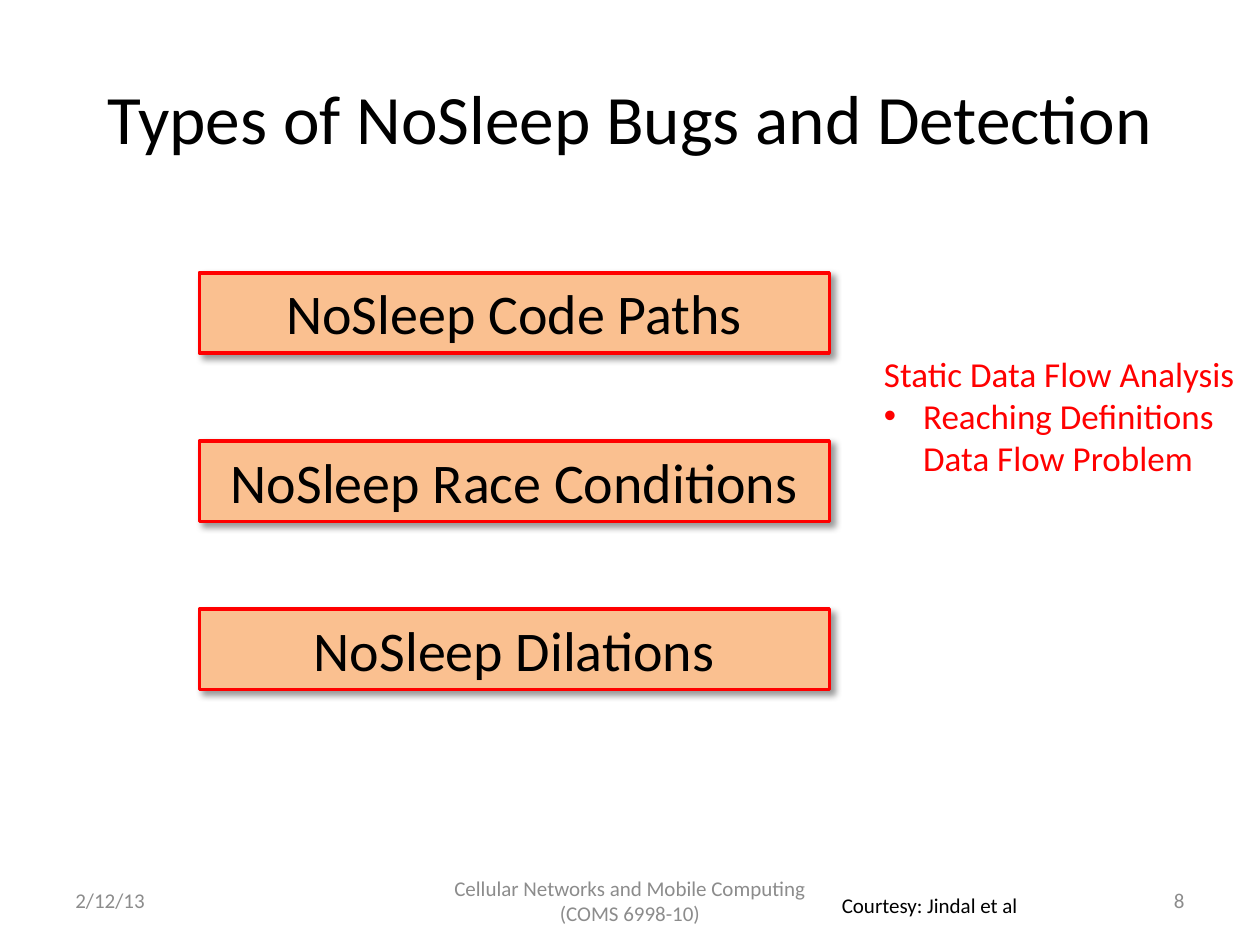
from lxml.etree import SubElement
from pptx import Presentation
from pptx.dml.color import RGBColor
from pptx.enum.shapes import MSO_SHAPE
from pptx.enum.text import MSO_ANCHOR as ANCHOR, PP_ALIGN as ALIGN
from pptx.oxml import parse_xml
from pptx.oxml.ns import nsdecls, qn
from pptx.util import Cm, Pt

# Content
TITLE = "Types of NoSleep Bugs and Detection"
BUG_TYPES = ["NoSleep Code Paths", "NoSleep Race Conditions", "NoSleep Dilations"]
ANALYSIS = "Static Data Flow Analysis"
PROBLEM = "Reaching Definitions Data Flow Problem"
COURTESY = "Courtesy: Jindal et al"
FOOTERS = [  # text, left, width, alignment
    ("2/12/13", 1.27, 5.93, ALIGN.LEFT),
    ("Cellular Networks and Mobile Computing (COMS 6998-10)", 8.68, 8.04, ALIGN.CENTER),
    ("8", 18.2, 5.93, ALIGN.RIGHT),
]

# Layout in cm
BOX_LEFT, BOX_TOP, BOX_W, BOX_H, BOX_PITCH = 4.02, 5.5, 12.7, 1.62, 3.39
FOOTER_TOP, FOOTER_H = 17.65, 1.01

BLACK, RED, ORANGE, GREY = "000000", "FF0000", "FAC090", "8C8C8C"
SHADOW = f"""<a:effectLst {nsdecls('a')}>
  <a:outerShdw blurRad="{Pt(4)}" dist="{Pt(3)}" dir="2700000" algn="tl" rotWithShape="0">
    <a:srgbClr val="{BLACK}"><a:alpha val="40000"/></a:srgbClr>
  </a:outerShdw></a:effectLst>"""


def rgb(color):
    return RGBColor.from_string(color)


def write(p, text, size=12, color=BLACK, align=ALIGN.LEFT):
    p.alignment = align
    r = p.add_run()
    r.text = text
    r.font.name, r.font.size = "Calibri", Pt(size)
    r.font.color.rgb = rgb(color)


def add_text(s, text, box, anchor=ANCHOR.TOP, wrap=True, **fmt):
    tf = s.shapes.add_textbox(*map(Cm, box)).text_frame
    tf.word_wrap, tf.vertical_anchor = wrap, anchor
    write(tf.paragraphs[0], text, **fmt)
    return tf


def add_bullet(p, indent):
    pPr = p._p.get_or_add_pPr()
    pPr.set("marL", str(Cm(indent)))
    pPr.set("indent", str(-Cm(indent)))
    SubElement(pPr, qn("a:buFont"), typeface="Arial")
    SubElement(pPr, qn("a:buChar"), char="•")


def add_bug_box(s, text, top):
    sp = s.shapes.add_shape(MSO_SHAPE.RECTANGLE, *map(Cm, (BOX_LEFT, top, BOX_W, BOX_H)))
    sp.fill.solid()
    sp.fill.fore_color.rgb = rgb(ORANGE)
    sp.line.color.rgb = rgb(RED)
    sp.line.width = Pt(2)
    sp._element.spPr.append(parse_xml(SHADOW))
    tf = sp.text_frame
    tf.word_wrap, tf.vertical_anchor = True, ANCHOR.TOP
    write(tf.paragraphs[0], text, size=32, align=ALIGN.CENTER)


prs = Presentation()
prs.slide_width, prs.slide_height = Cm(25.4), Cm(19.05)
s = prs.slides.add_slide(prs.slide_layouts[6])

# Title
add_text(s, TITLE, (1.27, 0.76, 22.86, 3.18), ANCHOR.MIDDLE, size=39.6, align=ALIGN.CENTER)

# Bug types
for i, bug in enumerate(BUG_TYPES):
    add_bug_box(s, bug, BOX_TOP + i * BOX_PITCH)

# Detection method
tf = add_text(s, ANALYSIS, (17.57, 6.99, 7.83, 2.82), size=20, color=RED)
p = tf.add_paragraph()
write(p, PROBLEM, size=20, color=RED)
add_bullet(p, 0.79)

# Footers and credit
for text, left, width, align in FOOTERS:
    add_text(s, text, (left, FOOTER_TOP, width, FOOTER_H), ANCHOR.MIDDLE,
             color=GREY, align=align)
add_text(s, COURTESY, (16.72, 17.86, 4.11, 0.77), wrap=False)

prs.save("out.pptx")
